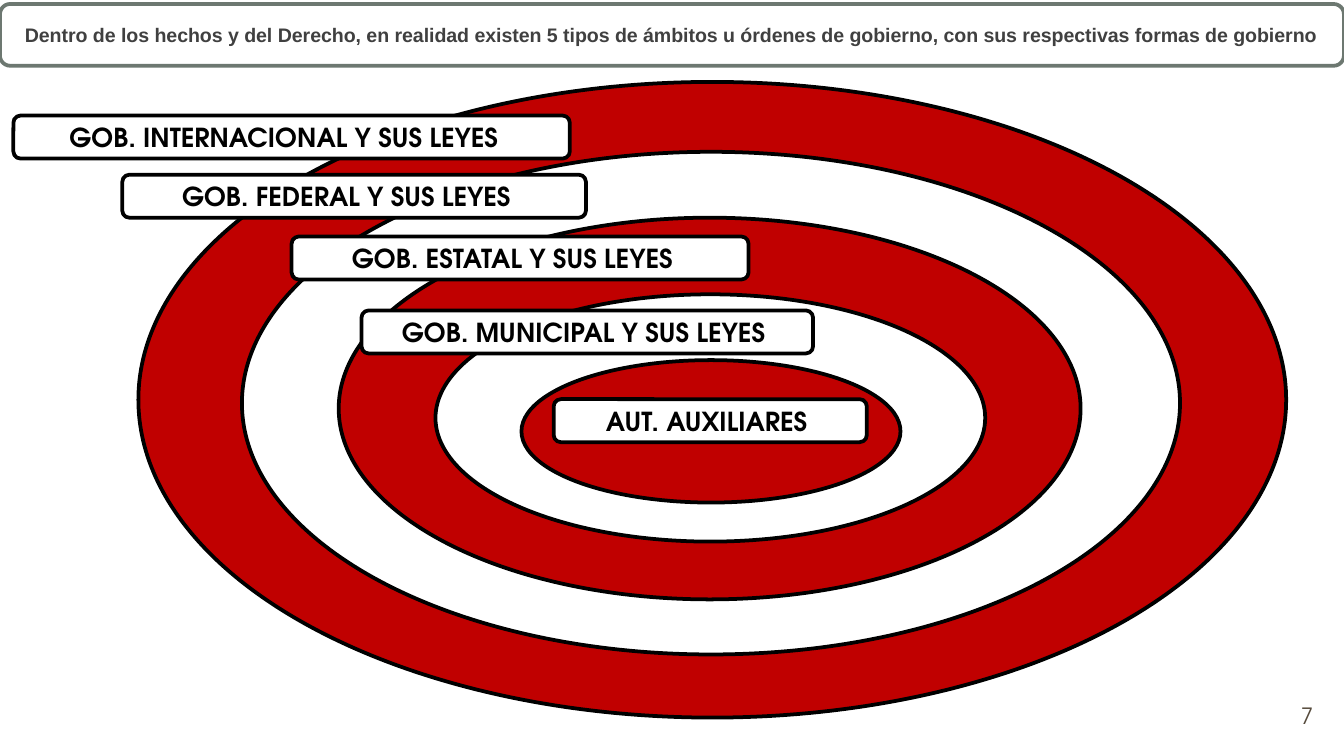
from pptx import Presentation
from pptx.dml.color import RGBColor
from pptx.enum.shapes import MSO_SHAPE
from pptx.enum.text import MSO_ANCHOR, MSO_AUTO_SIZE, PP_ALIGN
from pptx.util import Inches, Pt

COLORS = {
    "red": "C00000",
    "white": "FFFFFF",
    "black": "000000",
    "frame": "6D7871",
    "title": "404040",
    "number": "564B3C",
}
LABEL_FONT = "TeX Gyre Adventor"
TITLE = (
    "Dentro de los hechos y del Derecho, en realidad existen 5 tipos de ámbitos "
    "u órdenes de gobierno, con sus respectivas formas de gobierno"
)
PAGE_NUMBER = "7"
SLIDE_WIDTH = Inches(10)
SLIDE_HEIGHT = SLIDE_WIDTH * 9 // 16
HEADER_BOX = (0, 0.03, 10, 0.46)
NUMBER_BOX = (9.27, 5.11, 0.6, 0.43)

RINGS = [
    (1.03, 0.61, 8.54, 4.73),
    (1.8, 1.13, 6.98, 3.74),
    (2.52, 1.62, 5.52, 2.84),
    (3.24, 2.19, 4.09, 1.84),
    (3.88, 2.68, 2.82, 1.06),
]
LABEL_HEIGHT = 0.32
LABELS = [
    ("GOB. INTERNACIONAL Y SUS LEYES", 0.1, 0.86, 4.14, 0.21),
    ("GOB. FEDERAL Y SUS LEYES", 0.91, 1.3, 3.45, 0.21),
    ("GOB. ESTATAL Y SUS LEYES", 2.17, 1.76, 3.4, 0.21),
    ("GOB. MUNICIPAL Y SUS LEYES", 2.69, 2.31, 3.36, 0.15),
    ("AUT. AUXILIARES", 4.12, 2.97, 2.33, 0.15),
]


def color(name):
    return RGBColor.from_string(COLORS[name])


def add_outlined(slide, kind, box, fill, line):
    shape = slide.shapes.add_shape(kind, *map(Inches, box))
    shape.shadow.inherit = False
    if fill:
        shape.fill.solid()
        shape.fill.fore_color.rgb = color(fill)
    else:
        shape.fill.background()
    shape.line.color.rgb = color(line)
    shape.line.width = Pt(2)
    return shape


def write(shape, text, size, font, font_color, bold, alignment, left=0.1, right=0.1):
    frame = shape.text_frame
    frame.text = text
    frame.word_wrap = True
    frame.auto_size = MSO_AUTO_SIZE.NONE
    frame.vertical_anchor = MSO_ANCHOR.MIDDLE
    frame.margin_left, frame.margin_right = Inches(left), Inches(right)
    frame.margin_top = frame.margin_bottom = 0
    paragraph = frame.paragraphs[0]
    paragraph.alignment = alignment
    paragraph.font.size = Pt(size)
    paragraph.font.name = font
    paragraph.font.bold = bold
    paragraph.font.color.rgb = color(font_color)


def main():
    presentation = Presentation()
    presentation.slide_width, presentation.slide_height = SLIDE_WIDTH, SLIDE_HEIGHT
    slide = presentation.slides.add_slide(presentation.slide_layouts[5])

    number = slide.shapes.add_textbox(*map(Inches, NUMBER_BOX))
    write(number, PAGE_NUMBER, 12, LABEL_FONT, "number", False, PP_ALIGN.RIGHT)

    for index, box in enumerate(RINGS):
        fill = "white" if index % 2 else "red"
        add_outlined(slide, MSO_SHAPE.OVAL, box, fill, "black")

    for text, left, top, width, right_margin in LABELS:
        box = (left, top, width, LABEL_HEIGHT)
        label = add_outlined(slide, MSO_SHAPE.ROUNDED_RECTANGLE, box, "white", "black")
        write(label, text, 14, LABEL_FONT, "black", True, PP_ALIGN.CENTER, right=right_margin)

    add_outlined(slide, MSO_SHAPE.ROUNDED_RECTANGLE, HEADER_BOX, None, "frame")
    title = slide.shapes.title
    title.left, title.top, title.width, title.height = map(Inches, HEADER_BOX)
    write(title, TITLE, 10.5, "Arial", "title", True, PP_ALIGN.CENTER, 0.05, 0.05)

    presentation.save("out.pptx")


if __name__ == "__main__":
    main()
